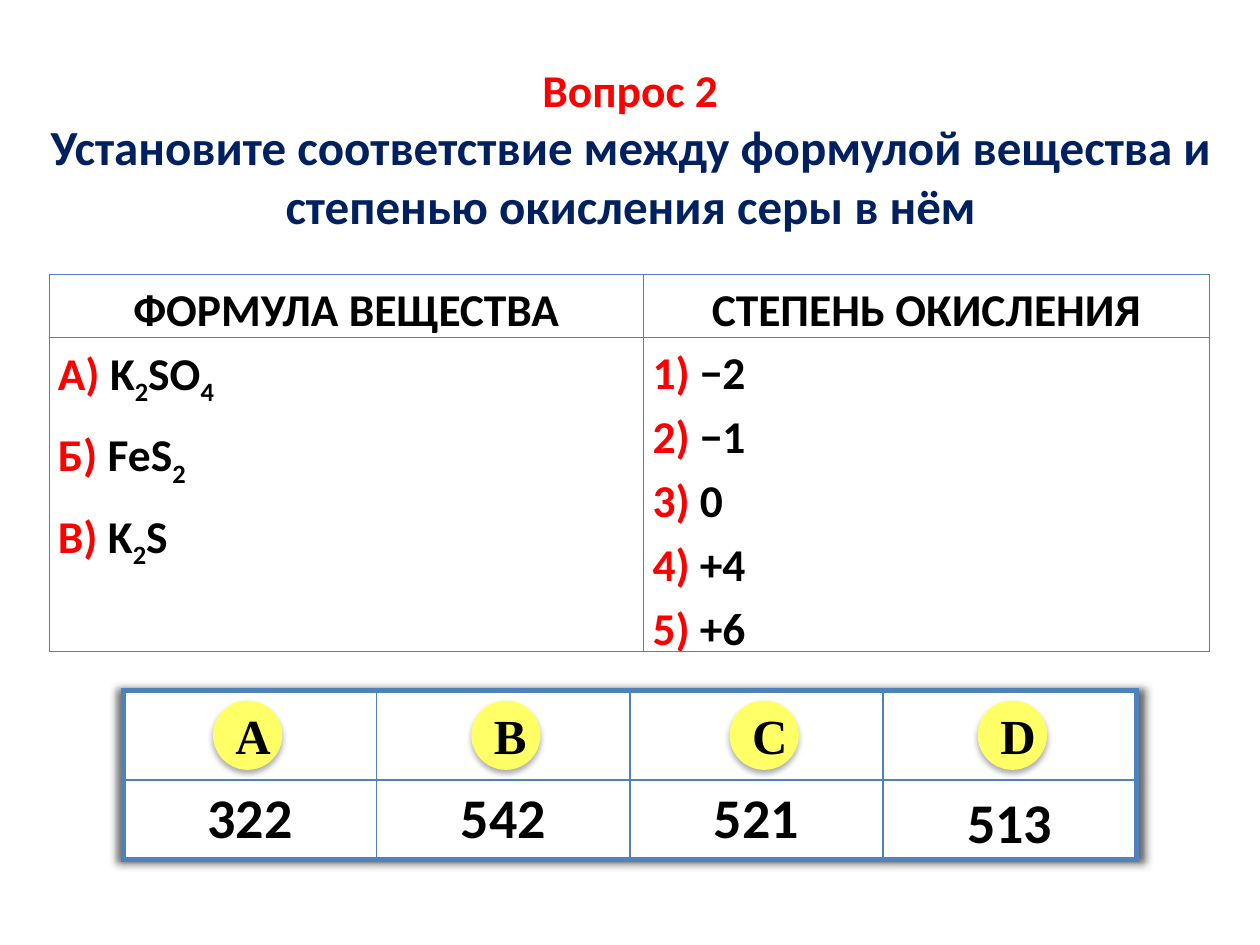
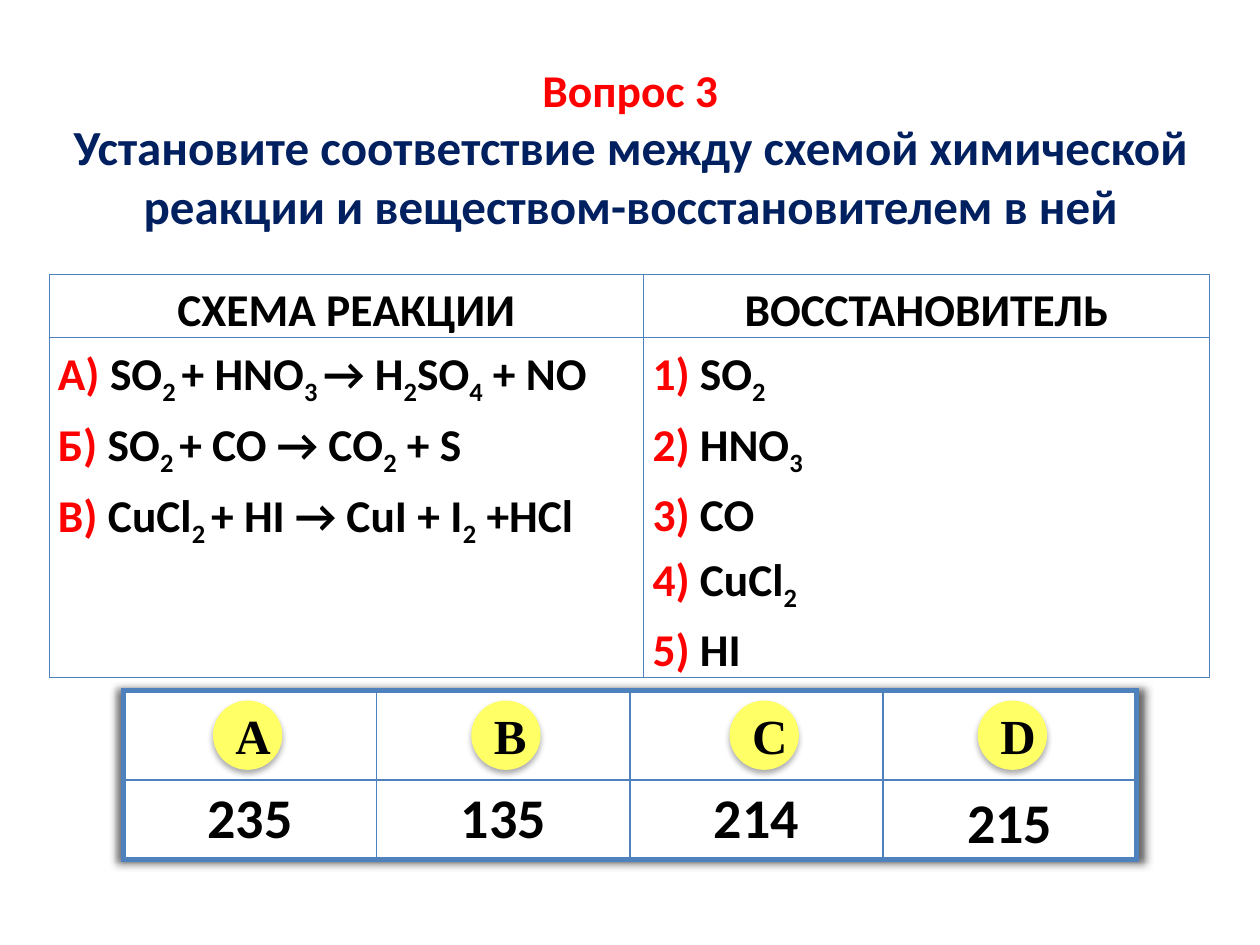
from lxml import etree
from pptx import Presentation
from pptx import util as u
from pptx.dml import color as c
from pptx.enum import shapes, text
from pptx.oxml import ns

SANS, SERIF = "Calibri", "Times New Roman"
BLACK, WHITE, RED, NAVY = "000000", "FFFFFF", "FF0000", "002060"
BLUE, YELLOW = "4F81BD", "FFFF66"
CENTER = text.PP_ALIGN.CENTER
MIDDLE = text.MSO_ANCHOR.MIDDLE
HANG = 27

TITLE_BOX = (20, 31.68, 680.4, 289.44)
MATCH_BOX = (28.08, 156.96, 663.12, 214.5)
ANSWER_BOX = (70.56, 394.56, 578.88, 96.48)
BADGE_LEFTS = (51.12, 198.72, 346.32, 488.16)

QUESTIONS = [
    {
        "title": "Вопрос 2",
        "task": "Установите соответствие между формулой вещества и степенью окисления серы в нём",
        "heads": ("ФОРМУЛА ВЕЩЕСТВА", "СТЕПЕНЬ ОКИСЛЕНИЯ"),
        "items": [("А) ", "K{2}SO{4}"), ("Б) ", "FeS{2}"), ("В) ", "K{2}S")],
        "item_style": {"after": 6},
        "options": ["−2", "−1", "0", "+4", "+6"],
        "answers": ["322", "542", "521", "513"],
    },
    {
        "title": "Вопрос 3",
        "task": "Установите соответствие между схемой химической реакции и веществом-восстановителем в ней",
        "heads": ("СХЕМА РЕАКЦИИ", "ВОССТАНОВИТЕЛЬ"),
        "items": [
            ("А) ", "SO{2 }+ HNO{3 }→ H{2}SO{4} + NO"),
            ("Б) ", "SO{2 }+ CO → CO{2} + S"),
            ("В) ", "CuCl{2 }+ HI → CuI + I{2} +HCl"),
        ],
        "item_style": {"hanging": True},
        "options": ["SO{2}", "HNO{3}", "CO", "CuCl{2}", "HI"],
        "answers": ["235", "135", "214", "215"],
    },
]


def rgb(value):
    """Turn a hex string into a colour."""
    return c.RGBColor.from_string(value)


def child(parent, tag, **attributes):
    """Append a DrawingML element with the given attributes."""
    element = etree.SubElement(parent, ns.qn("a:" + tag))
    for name, value in attributes.items():
        element.set(name, str(value))
    return element


def add_shadow(effects, alpha, **attributes):
    """Put a black outer shadow into an effect list."""
    shadow = child(effects, "outerShdw", rotWithShape=0, **attributes)
    child(child(shadow, "srgbClr", val=BLACK), "alpha", val=alpha * 1000)


def style(para, size, color=BLACK, face=SANS, align=None, spacing=None, after=None):
    """Set the font and layout of a paragraph."""
    para.alignment = align
    para.line_spacing = spacing
    if after:
        para.space_after = u.Pt(after)
    font = para.font
    font.name, font.size, font.bold = face, u.Pt(size), True
    font.color.rgb = rgb(color)


def add_paragraph(frame, first):
    """Return the first paragraph of a frame or a new one."""
    return frame.paragraphs[0] if first else frame.add_paragraph()


def add_formula(para, formula):
    """Add runs, lowering the parts in braces."""
    for index, part in enumerate(formula.replace("}", "{").split("{")):
        if part:
            span = para.add_run()
            span.text = part
            if index % 2:
                span.font._element.set("baseline", "-25000")


def hang(para, numbered=False):
    """Give a paragraph a hanging indent and, if asked, a red number."""
    props = para._p.get_or_add_pPr()
    props.set("marL", str(u.Pt(HANG)))
    props.set("indent", str(-u.Pt(HANG)))
    if numbered:
        child(child(props, "buClr"), "srgbClr", val=RED)
        child(props, "buAutoNum", type="arabicParenR")


def set_borders(cell, widths):
    """Draw the left, right, top and bottom borders of a cell."""
    props = cell._tc.get_or_add_tcPr()
    for index, (side, width) in enumerate(zip("LRTB", widths)):
        line = child(props, "ln" + side, w=u.Pt(width))
        child(child(line, "solidFill"), "srgbClr", val=BLUE)
        props.insert(index, line)


def add_grid(page, box, widths, heights):
    """Add an unbanded table with narrow cell margins."""
    table = page.shapes.add_table(len(heights), len(widths), *map(u.Pt, box)).table
    table.first_row = table.horz_banding = False
    for column, width in zip(table.columns, widths):
        column.width = u.Pt(width)
    for row, height in zip(table.rows, heights):
        row.height = u.Pt(height)
    for cell in table.iter_cells():
        cell.margin_left = cell.margin_right = u.Pt(5)
        cell.margin_top = cell.margin_bottom = 0
    return table


def add_answers(page, box, answers):
    """Draw the framed answer table with its lettered badges."""
    left, top, width, height = box
    count = len(answers)
    table = add_grid(page, box, [width / count] * count, (51.12, height - 51.12))
    effects = child(table._tbl.tblPr, "effectLst")
    table._tbl.tblPr.insert(0, effects)
    add_shadow(effects, 60, blurRad=u.Pt(5), sx=101000, sy=101000, algn="ctr")
    for row in range(2):
        for column in range(count):
            cell = table.cell(row, column)
            cell.fill.solid()
            cell.fill.fore_color.rgb = rgb(WHITE)
            outer = (column == 0, column == count - 1, row == 0, row == 1)
            set_borders(cell, [3 if edge else 1 for edge in outer])
    for column, answer in enumerate(answers):
        cell = table.cell(1, column)
        cell.vertical_anchor = MIDDLE
        para = cell.text_frame.paragraphs[0]
        para.add_run().text = answer
        style(para, 32, align=CENTER, spacing=1.15 if column == count - 1 else None)
    group = page.shapes.add_group_shape()
    for letter, offset in zip("ABCD", BADGE_LEFTS):
        add_badge(group, (left + offset, top + 5.76, 39.6, 39.6), letter)


def add_badge(group, box, letter):
    """Draw a yellow circle with a letter."""
    badge = group.shapes.add_shape(shapes.MSO_SHAPE.OVAL, *map(u.Pt, box))
    badge.fill.solid()
    badge.fill.fore_color.rgb = rgb(YELLOW)
    badge.line.fill.background()
    badge.shadow.inherit = False
    effects = badge._element.spPr.find(ns.qn("a:effectLst"))
    add_shadow(effects, 32, blurRad=u.Pt(3.5), dist=u.Pt(2.2), dir=5400000)
    frame = badge.text_frame
    frame.word_wrap = True
    frame.vertical_anchor = MIDDLE
    para = frame.paragraphs[0]
    para.add_run().text = letter
    style(para, 28, face=SERIF, align=CENTER)


def add_title(page, box, title, task):
    """Write the question number and the task below it."""
    panel = page.shapes.add_textbox(*map(u.Pt, box))
    panel.fill.solid()
    panel.fill.fore_color.rgb = rgb(WHITE)
    frame = panel.text_frame
    frame.word_wrap = True
    frame.auto_size = text.MSO_AUTO_SIZE.SHAPE_TO_FIT_TEXT
    for index, (words, size, color) in enumerate([(title, 26, RED), (task, 28, NAVY)]):
        para = add_paragraph(frame, index == 0)
        para.add_run().text = words
        style(para, size, color, align=CENTER)


def add_matching(page, box, question):
    """Draw the two-column table of items and options."""
    table = add_grid(page, box, (339.84, box[2] - 339.84), (35.28, box[3] - 35.28))
    for cell in table.iter_cells():
        cell.fill.background()
        set_borders(cell, [0.5] * 4)
    for column, head in enumerate(question["heads"]):
        para = table.cell(0, column).text_frame.paragraphs[0]
        para.add_run().text = head
        style(para, 26, align=CENTER, spacing=1.15, after=6)
    frame = table.cell(1, 0).text_frame
    item_style = question["item_style"]
    for index, (label, formula) in enumerate(question["items"]):
        para = add_paragraph(frame, index == 0)
        if item_style.get("hanging"):
            hang(para)
        span = para.add_run()
        span.text = label
        span.font.color.rgb = rgb(RED)
        add_formula(para, formula)
        style(para, 26, spacing=1.15, after=item_style.get("after"))
    frame = table.cell(1, 1).text_frame
    options = question["options"]
    for index, option in enumerate(options):
        para = add_paragraph(frame, index == 0)
        hang(para, numbered=True)
        add_formula(para, option)
        style(para, 26, spacing=1.15, after=6 if index == len(options) - 1 else None)


def add_question(deck, question):
    """Build one question page."""
    page = deck.slides.add_slide(deck.slide_layouts[6])
    add_answers(page, ANSWER_BOX, question["answers"])
    add_title(page, TITLE_BOX, question["title"], question["task"])
    add_matching(page, MATCH_BOX, question)


def main():
    """Build and save the deck."""
    deck = Presentation()
    deck.slide_width, deck.slide_height = u.Pt(720), u.Pt(540)
    for question in QUESTIONS:
        add_question(deck, question)
    deck.save("out.pptx")


if __name__ == "__main__":
    main()
